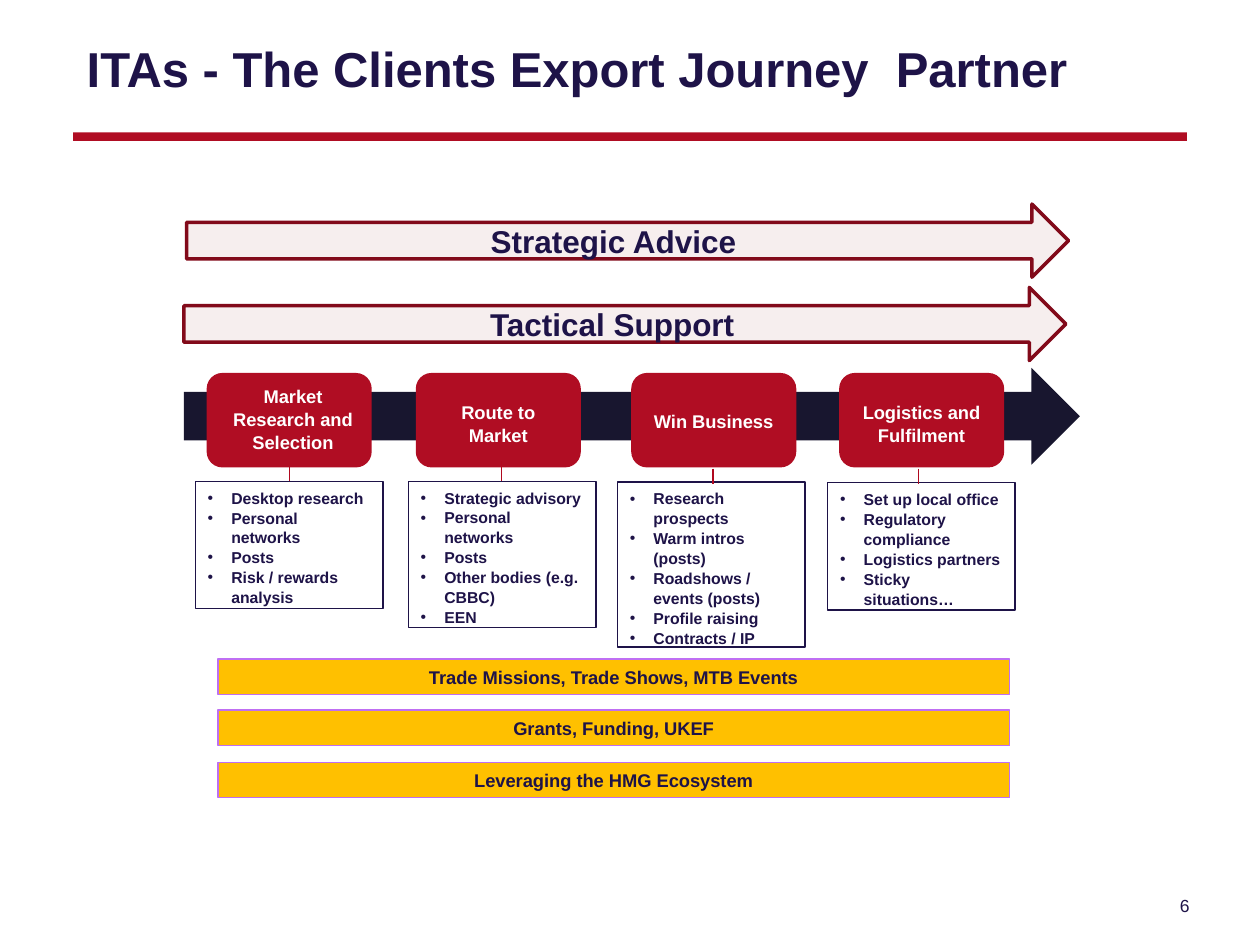
import pptx
import pptx.dml.color
import pptx.enum.shapes
import pptx.enum.text
import pptx.oxml
import pptx.util
from dataclasses import dataclass
from lxml import etree

Pt = pptx.util.Pt
SHAPE = pptx.enum.shapes.MSO_SHAPE
ANCHOR = pptx.enum.text.MSO_ANCHOR
ALIGN = pptx.enum.text.PP_ALIGN
A = "{http://schemas.openxmlformats.org/drawingml/2006/main}"


@dataclass(frozen=True)
class Theme:
    font: str = "Arial"
    ink: str = "1E1348"
    white: str = "FFFFFF"
    red: str = "B00D23"
    navy: str = "18162F"
    pale: str = "F6EEEE"
    dark_red: str = "820A1A"
    link: str = "B0091F"
    gold: str = "FFC000"
    violet: str = "BF6FF3"
    title_size: float = 28
    arrow_size: float = 18
    label_size: float = 10.5
    number_size: float = 10
    list_size: float = 9
    spacing: float = 1.05


T = Theme()

# Each stage: button left, label (left, top, height), list box (left, top, width, height),
# connector (x, top, bottom), label text, list items
STAGES = [
    (118.1, (124.6, 216.7, 45.4), (111.6, 275, 107.3, 72.7), (165.6, 267.1, 275),
     "Market Research and Selection",
     ["Desktop research", "Personal networks", "Posts", "Risk / rewards analysis"]),
    (237.6, (241.9, 225.4, 32.4), (233.3, 275, 107.3, 83.5), (286.6, 263.5, 275),
     "Route to Market",
     ["Strategic advisory", "Personal networks", "Posts",
      "Other bodies (e.g. CBBC)", "EEN"]),
    (360.7, (365, 230.4, 20.2), (352.8, 275.4, 107.3, 94.3), (407.5, 267.8, 276.5),
     "Win Business",
     ["Research prospects", "Warm intros (posts)", "Roadshows / events (posts)",
      "Profile raising", "Contracts / IP"]),
    (479.5, (483.8, 225.4, 32.4), (473, 275.8, 107, 72.7), (524.9, 267.8, 276.5),
     "Logistics and Fulfilment",
     ["Set up local office", "Regulatory compliance", "Logistics partners",
      "Sticky situations…"]),
]

# Advice arrows: left, top, label left, text
ADVICE = [
    (106.6, 116.6, 213.8, "Strategic Advice"),
    (105.1, 164.2, 213.1, "Tactical Support"),
]

# Support bars: top, text
BARS = [
    (376.6, "Trade Missions, Trade Shows, MTB Events"),
    (405.7, "Grants, Funding, UKEF"),
    (435.6, "Leveraging the HMG Ecosystem"),
]


def rgb(value):
    return pptx.dml.color.RGBColor.from_string(value)


def apply(obj, formats):
    for name, value in formats.items():
        setattr(obj, name, value)


def add_block(s, kind, box, fill=None, line=None, width=0.75):
    sp = s.shapes.add_shape(kind, *map(Pt, box))
    sp.shadow.inherit = False
    if fill:
        sp.fill.solid()
        sp.fill.fore_color.rgb = rgb(fill)
    else:
        sp.fill.background()
    if line:
        sp.line.color.rgb = rgb(line)
        sp.line.width = Pt(width)
    else:
        sp.line.fill.background()
    return sp


def add_bullet(p):
    pPr = p._p.get_or_add_pPr()
    pPr.set("marL", str(Pt(13.5)))
    pPr.set("indent", str(-Pt(13.5)))
    etree.SubElement(pPr, A + "buFont", typeface=T.font)
    etree.SubElement(pPr, A + "buChar", char="•")


def write(sp, lines, size, color=T.ink, align=ALIGN.CENTER, bold=True,
          anchor=ANCHOR.MIDDLE, bullets=False):
    tf = sp.text_frame
    apply(tf, {"word_wrap": True, "vertical_anchor": anchor,
               "margin_left": Pt(7.2), "margin_right": Pt(7.2),
               "margin_top": Pt(3.6), "margin_bottom": Pt(3.6)})
    for i, text in enumerate(lines):
        p = tf.paragraphs[0] if i == 0 else tf.add_paragraph()
        apply(p, {"alignment": align, "line_spacing": T.spacing})
        if bullets:
            add_bullet(p)
        r = p.add_run()
        r.text = text
        apply(r.font, {"name": T.font, "size": Pt(size), "bold": bold})
        r.font.color.rgb = rgb(color)


def add_text(s, box, text, size, **formats):
    write(s.shapes.add_textbox(*map(Pt, box)), [text], size, **formats)


def add_link(s, x, top, bottom):
    line = s.shapes.add_connector(pptx.enum.shapes.MSO_CONNECTOR.STRAIGHT,
                                  Pt(x), Pt(top), Pt(x), Pt(bottom))
    line.line.color.rgb = rgb(T.link)
    line.line.width = Pt(0.75)
    etree.SubElement(line._element.spPr, A + "effectLst")


def add_stage(s, left, label, box, link, name, items):
    add_block(s, SHAPE.ROUNDED_RECTANGLE, (left, 213.1, 94.3, 54), T.red)
    x, y, height = label
    sp = add_block(s, SHAPE.RECTANGLE, (x, y, 85.7, height), T.red)
    write(sp, [name], T.label_size, color=T.white)
    sp = add_block(s, SHAPE.RECTANGLE, box, line=T.ink)
    write(sp, items, T.list_size, align=ALIGN.LEFT, anchor=ANCHOR.TOP, bullets=True)
    add_link(s, *link)


def add_advice(s, left, top, label_left, text):
    add_block(s, SHAPE.RIGHT_ARROW, (left, top, 504, 41.8), T.pale, T.dark_red, 2)
    add_text(s, (label_left, top + 6.2, 273.6, 28.8), text, T.arrow_size)


def add_bar(s, top, text):
    sp = add_block(s, SHAPE.RECTANGLE, (124.6, top, 452.2, 20.2), T.gold, T.violet)
    write(sp, [text], T.label_size)


def main():
    prs = pptx.Presentation()
    prs.slide_width, prs.slide_height = Pt(720), Pt(540)
    s = prs.slides.add_slide(prs.slide_layouts[6])

    # Title and rule
    add_block(s, SHAPE.RECTANGLE, (41.8, 75.6, 636.5, 5), T.red)
    add_text(s, (42.5, 6.5, 669.6, 63.4), "ITAs - The Clients Export Journey  Partner",
             T.title_size, align=ALIGN.LEFT)

    # Journey arrow with its stages
    add_block(s, SHAPE.RIGHT_ARROW, (105.1, 210.2, 511.9, 55.4), T.navy)
    for stage in STAGES:
        add_stage(s, *stage)

    # Advice arrows above, support bars below
    for advice in ADVICE:
        add_advice(s, *advice)
    for bar in BARS:
        add_bar(s, *bar)

    # Slide number
    add_text(s, (653, 508.3, 33.8, 17.3), "6", T.number_size,
             align=ALIGN.RIGHT, bold=False)

    prs.save("out.pptx")


if __name__ == "__main__":
    main()
